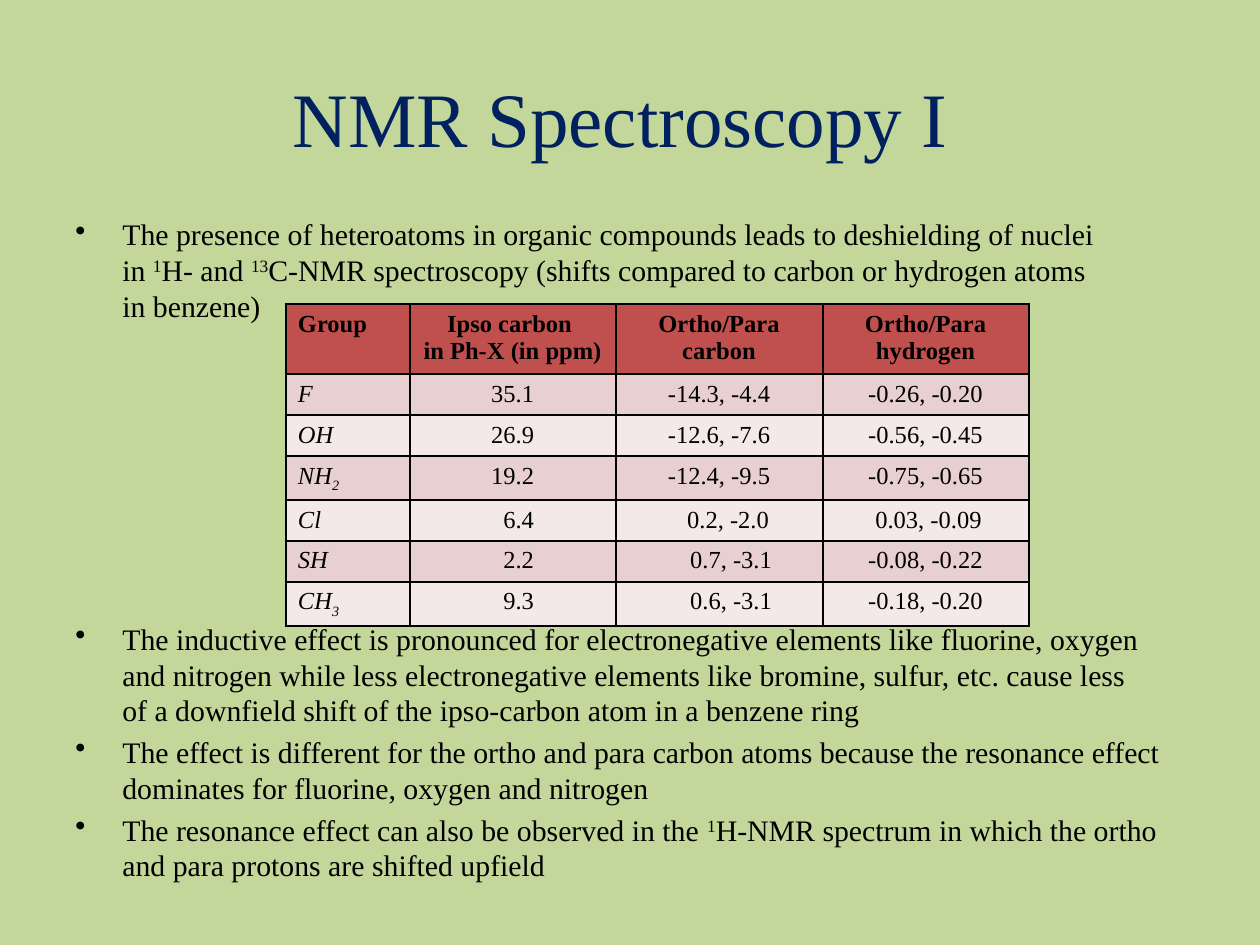
"""Build the NMR Spectroscopy I slide with its bullets and shift table."""
from lxml import etree
from pptx import Presentation
from pptx.dml.color import RGBColor
from pptx.enum.text import MSO_ANCHOR, PP_ALIGN
from pptx.oxml.ns import qn
from pptx.util import Pt

LEFT, CENTER = PP_ALIGN.LEFT, PP_ALIGN.CENTER
TOP, MIDDLE = MSO_ANCHOR.TOP, MSO_ANCHOR.MIDDLE
TITLE_ONLY = 5
SCALE = 914400 / 126
COLORS = {
    "background": "C3D79B", "title": "002060", "text": "000000",
    "header": "C0504D", "odd": "E8D0D0", "even": "F4E9E9",
}
SUPER, SUB = 30, -25
BULLET_GAP, TABLE_GAP = 3.4, 170
CELL_MARGIN, CELL_BOTTOM = 12, 3

BULLETS = [
    (["The presence of heteroatoms in organic compounds leads to deshielding of nuclei \nin ",
      ("1", SUPER), "H- and ", ("13", SUPER),
      "C-NMR spectroscopy (shifts compared to carbon or hydrogen atoms \nin benzene)"],
     BULLET_GAP),
    (["The inductive effect is pronounced for electronegative elements like fluorine, oxygen \n"
      "and nitrogen while less electronegative elements like bromine, sulfur, etc. cause less \n"
      "of a downfield shift of the ipso-carbon atom in a benzene ring"], TABLE_GAP),
    (["The effect is different for the ortho and para carbon atoms because the resonance "
      "effect dominates for fluorine, oxygen and nitrogen"], BULLET_GAP),
    (["The resonance effect can also be observed in the ", ("1", SUPER),
      "H-NMR spectrum in which the ortho and para protons are shifted upfield"], BULLET_GAP),
]
HEADINGS = ["Group", "Ipso carbon \nin Ph-X (in ppm)", "Ortho/Para carbon",
            "Ortho/Para hydrogen"]
SHIFTS = [
    (["F"], "35.1", "-14.3, -4.4", "-0.26, -0.20"),
    (["OH"], "26.9", "-12.6, -7.6", "-0.56, -0.45"),
    (["NH", ("2", SUB)], "19.2", "-12.4, -9.5", "-0.75, -0.65"),
    (["Cl"], "6.4", "0.2, -2.0", "0.03, -0.09"),
    (["SH"], "2.2", "0.7, -3.1", "-0.08, -0.22"),
    (["CH", ("3", SUB)], "9.3", "0.6, -3.1", "-0.18, -0.20"),
]
INDENTS = {(4, 1): 12, (4, 2): 18, (4, 3): 6, (5, 1): 12, (5, 2): 24,
           (6, 1): 12, (6, 2): 24}
COLUMN_WIDTHS = [124, 206, 207, 206]
ROW_HEIGHTS = [70, 41, 41, 44, 41, 41, 44]


def px(length):
    return round(length * SCALE)


def write(paragraph, parts, size=17, color="text", align=LEFT, bold=False, italic=False):
    paragraph.alignment = align
    for part in parts:
        words, baseline = (part, 0) if isinstance(part, str) else part
        for number, line in enumerate(words.split("\n")):
            if number:
                paragraph.add_line_break()
            run = paragraph.add_run()
            run.text = line
            font = run.font
            font.name, font.size = "Times New Roman", Pt(size)
            font.bold, font.italic = bold, italic
            font.color.rgb = RGBColor.from_string(COLORS[color])
            if baseline:
                font._element.set("baseline", str(baseline * 1000))


class Deck:
    def __init__(self):
        self.presentation = Presentation()
        self.presentation.slide_width = px(1260)
        self.presentation.slide_height = px(945)
        layout = self.presentation.slide_layouts[TITLE_ONLY]
        self.slide = self.presentation.slides.add_slide(layout)
        self.paint(self.slide.background.fill, "background")

    def paint(self, fill, color):
        fill.solid()
        fill.fore_color.rgb = RGBColor.from_string(COLORS[color])

    def title(self, words, x, y, width, height):
        heading = self.slide.shapes.title
        heading.left, heading.top = px(x), px(y)
        heading.width, heading.height = px(width), px(height)
        heading.text_frame.vertical_anchor = MIDDLE
        write(heading.text_frame.paragraphs[0], [words], 44, "title", CENTER)

    def bullets(self, items, x, y, width, height):
        frame = self.slide.shapes.add_textbox(px(x), px(y), px(width), px(height)).text_frame
        frame.word_wrap = True
        for number, (parts, gap) in enumerate(items):
            paragraph = frame.add_paragraph() if number else frame.paragraphs[0]
            paragraph.space_before = Pt(gap)
            write(paragraph, parts)
            properties = paragraph._p.get_or_add_pPr()
            properties.set("marL", str(px(47)))
            properties.set("indent", str(-px(47)))
            etree.SubElement(properties, qn("a:buChar"), char="•")

    def border(self, cell):
        properties = cell._tc.get_or_add_tcPr()
        for side in ("a:lnL", "a:lnR", "a:lnT", "a:lnB"):
            line = etree.SubElement(properties, qn(side), w=str(Pt(1)))
            fill = etree.SubElement(line, qn("a:solidFill"))
            etree.SubElement(fill, qn("a:srgbClr"), val=COLORS["text"])

    def cell(self, cell, parts, color, indent=0, **style):
        cell.vertical_anchor = TOP
        cell.margin_left = px(CELL_MARGIN + indent)
        cell.margin_bottom = px(CELL_BOTTOM)
        self.border(cell)
        self.paint(cell.fill, color)
        write(cell.text_frame.paragraphs[0], parts, 14, **style)

    def table(self, headings, rows, x, y):
        grid = self.slide.shapes.add_table(
            len(rows) + 1, len(headings), px(x), px(y),
            px(sum(COLUMN_WIDTHS)), px(sum(ROW_HEIGHTS))).table
        for column, width in zip(grid.columns, COLUMN_WIDTHS):
            column.width = px(width)
        for row, height in zip(grid.rows, ROW_HEIGHTS):
            row.height = px(height)
        for r, values in enumerate([headings, *rows]):
            color = "header" if r == 0 else "odd" if r % 2 else "even"
            for c, value in enumerate(values):
                parts = [value] if isinstance(value, str) else value
                self.cell(grid.cell(r, c), parts, color, INDENTS.get((r, c), 0),
                          align=CENTER if c else LEFT, bold=r == 0,
                          italic=r > 0 and c == 0)


def main():
    deck = Deck()
    deck.title("NMR Spectroscopy I ", 63, 38, 1134, 158)
    deck.bullets(BULLETS, 63, 210, 1134, 693)
    deck.table(HEADINGS, SHIFTS, 286, 304)
    deck.presentation.save("out.pptx")


if __name__ == "__main__":
    main()
